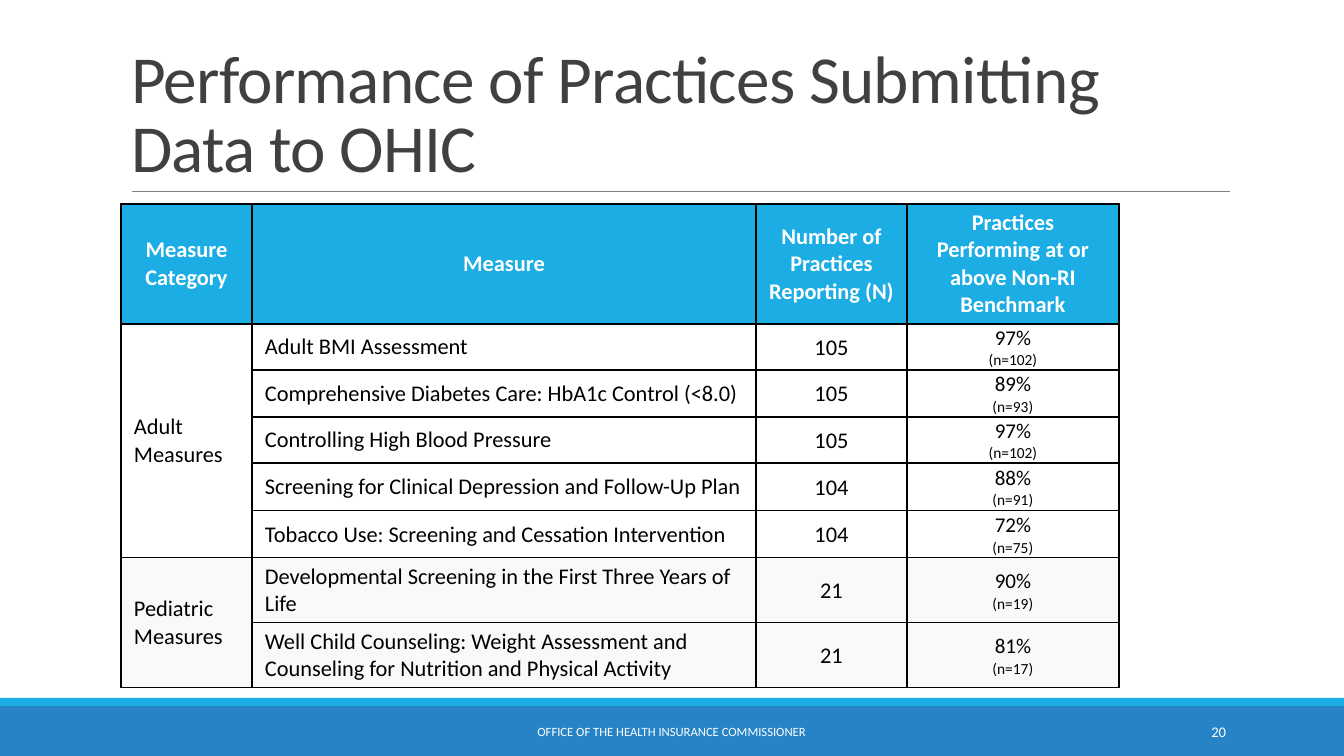
from dataclasses import dataclass

from lxml import etree
from pptx import Presentation
from pptx.dml.color import RGBColor
from pptx.enum.shapes import MSO_CONNECTOR, MSO_SHAPE
from pptx.enum.text import MSO_ANCHOR, MSO_AUTO_SIZE, PP_ALIGN
from pptx.oxml import parse_xml
from pptx.oxml.ns import nsdecls, qn
from pptx.util import Pt

LEFT, CENTER, RIGHT = PP_ALIGN.LEFT, PP_ALIGN.CENTER, PP_ALIGN.RIGHT
MIDDLE, BOTTOM = MSO_ANCHOR.MIDDLE, MSO_ANCHOR.BOTTOM
RECTANGLE, STRAIGHT = MSO_SHAPE.RECTANGLE, MSO_CONNECTOR.STRAIGHT
PX = 914400 / 100.8


@dataclass(frozen=True)
class Theme:
    font: str = "Calibri"
    white: str = "FFFFFF"
    ink: str = "000000"
    heading: str = "404040"
    rule: str = "808080"
    accent: str = "1CADE4"
    footer_band: str = "2683C6"
    pediatric: str = "F7F9FA"
    title_size: float = 48
    table_size: float = 16
    rate_size: float = 15
    count_size: float = 11
    footer_size: float = 9
    page_size: float = 10.5


theme = Theme()


def px(*lengths):
    return [round(length * PX) for length in lengths]


def write(paragraph, text, size, color, align=LEFT, bold=False):
    paragraph.alignment = align
    run = paragraph.add_run()
    run.text = text
    run.font.name = theme.font
    run.font.size = Pt(size)
    run.font.bold = bold
    run.font.color.rgb = RGBColor.from_string(color)
    return run


deck = Presentation()
deck.slide_width, deck.slide_height = px(1344, 756)
slide = deck.slides.add_slide(deck.slide_layouts[5])
shapes = slide.shapes

for top, height, color in ((706, 50, theme.footer_band), (698, 8, theme.accent)):
    band = shapes.add_shape(RECTANGLE, *px(0, top, 1344, height))
    band.shadow.inherit = False
    band.fill.solid()
    band.fill.fore_color.rgb = RGBColor.from_string(color)
    band.line.fill.background()

title_rule = shapes.add_connector(STRAIGHT, *px(132, 191, 1230, 191))
title_rule.line.color.rgb = RGBColor.from_string(theme.rule)
title_rule.line.width = Pt(0.5)
etree.SubElement(title_rule._element.spPr, qn("a:effectLst"))

title = shapes.title
title.left, title.top, title.width, title.height = px(121, 31, 1109, 160)
title.text_frame.auto_size = MSO_AUTO_SIZE.NONE
title.text_frame.word_wrap = True
title.text_frame.vertical_anchor = BOTTOM
heading = title.text_frame.paragraphs[0]
heading.line_spacing = 0.85
heading_run = write(heading, "Performance of Practices Submitting Data to OHIC",
                    theme.title_size, theme.heading)
heading_run.font._element.set("spc", "-50")

headers = ("Measure Category", "Measure", "Number of Practices Reporting (N)",
           "Practices Performing at or above Non-RI Benchmark")
categories = (
    ("Adult Measures", theme.white, (
        ("Adult BMI Assessment", "105", "97%", "(n=102)"),
        ("Comprehensive Diabetes Care: HbA1c Control (<8.0)", "105", "89%", "(n=93)"),
        ("Controlling High Blood Pressure", "105", "97%", "(n=102)"),
        ("Screening for Clinical Depression and Follow-Up Plan", "104", "88%", "(n=91)"),
        ("Tobacco Use: Screening and Cessation Intervention", "104", "72%", "(n=75)"),
    )),
    ("Pediatric Measures", theme.pediatric, (
        ("Developmental Screening in the First Three Years of Life", "21", "90%", "(n=19)"),
        ("Well Child Counseling: Weight Assessment and Counseling for Nutrition "
         "and Physical Activity", "21", "81%", "(n=17)"),
    )),
)
column_widths = (131, 504, 151, 212)
row_heights = (120, 46, 47, 46, 48, 47, 65, 65)

table = shapes.add_table(len(row_heights), len(column_widths),
                         *px(121, 204, sum(column_widths), sum(row_heights))).table
for column, width in zip(table.columns, px(*column_widths)):
    column.width = width
for row, height in zip(table.rows, px(*row_heights)):
    row.height = height

row_fills = [theme.accent]
for _, fill, measures in categories:
    row_fills += [fill] * len(measures)

for row_index, fill in enumerate(row_fills):
    for column_index in range(len(column_widths)):
        cell = table.cell(row_index, column_index)
        is_figure = row_index > 0 and column_index > 1
        insets = px(1, 1, 1, 0) if is_figure else px(13, 5, 13, 5)
        cell.margin_left, cell.margin_top, cell.margin_right, cell.margin_bottom = insets
        cell.vertical_anchor = MIDDLE
        for side in ("lnL", "lnR", "lnT", "lnB"):
            cell._tc.get_or_add_tcPr().append(parse_xml(
                f'<a:{side} {nsdecls("a")} w="12700"><a:solidFill>'
                f'<a:srgbClr val="{theme.ink}"/></a:solidFill></a:{side}>'))
        cell.fill.solid()
        cell.fill.fore_color.rgb = RGBColor.from_string(fill)

for column_index, header in enumerate(headers):
    write(table.cell(0, column_index).text_frame.paragraphs[0], header,
          theme.table_size, theme.white, CENTER, True)

first_row = 1
for category, _, measures in categories:
    category_cell = table.cell(first_row, 0)
    category_cell.merge(table.cell(first_row + len(measures) - 1, 0))
    write(category_cell.text_frame.paragraphs[0], category, theme.table_size, theme.ink)
    for row_index, (measure, practices, rate, count) in enumerate(measures, first_row):
        measure_text, practices_text, benchmark_text = (
            table.cell(row_index, column_index).text_frame for column_index in (1, 2, 3))
        write(measure_text.paragraphs[0], measure, theme.table_size, theme.ink)
        write(practices_text.paragraphs[0], practices, theme.table_size, theme.ink, CENTER)
        write(benchmark_text.paragraphs[0], rate, theme.rate_size, theme.ink, CENTER)
        write(benchmark_text.add_paragraph(), count, theme.count_size, theme.ink, CENTER)
    first_row += len(measures)

for left, width, text, size, align in (
    (406, 531, "OFFICE OF THE HEALTH INSURANCE COMMISSIONER", theme.footer_size, CENTER),
    (1092, 144, "20", theme.page_size, RIGHT),
):
    footer = shapes.add_textbox(*px(left, 712, width, 40)).text_frame
    footer.word_wrap = True
    footer.vertical_anchor = MIDDLE
    write(footer.paragraphs[0], text, size, theme.white, align)

deck.save("out.pptx")
